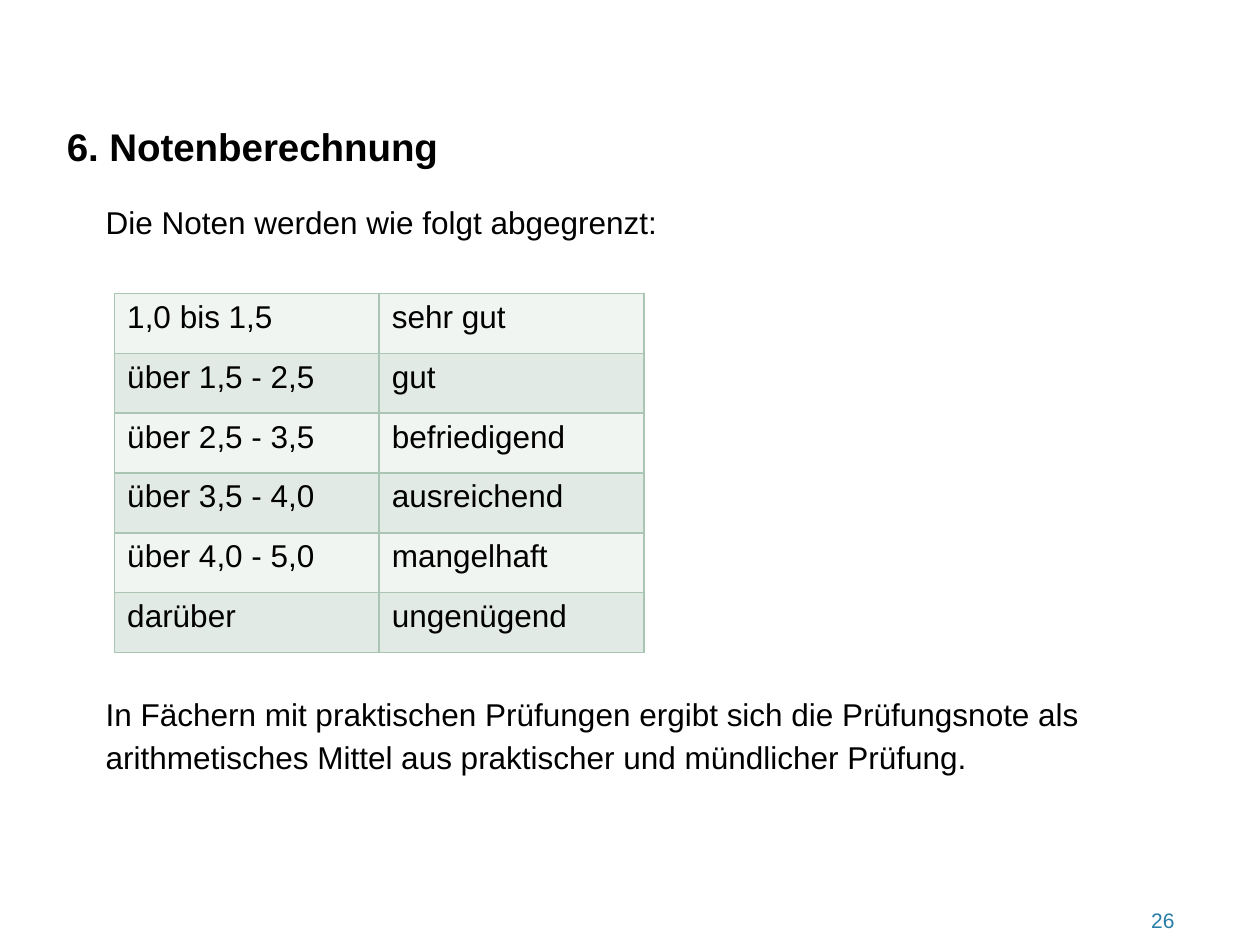
import pptx
import pptx.dml.color
import pptx.enum.text
import pptx.oxml
import pptx.oxml.ns
import pptx.util
from pptx.util import Inches

RGBColor = pptx.dml.color.RGBColor
PP_ALIGN = pptx.enum.text.PP_ALIGN
MSO_ANCHOR = pptx.enum.text.MSO_ANCHOR

BLACK = RGBColor(0x00, 0x00, 0x00)
BLUE = RGBColor(0x28, 0x7D, 0xA8)
BORDER = RGBColor(0xAA, 0xC5, 0xB4)
BANDS = (RGBColor(0xF1, 0xF5, 0xF2), RGBColor(0xE2, 0xEA, 0xE5))

GRADES = (
    ("1,0 bis 1,5", "sehr gut"),
    ("über 1,5 - 2,5", "gut"),
    ("über 2,5 - 3,5", "befriedigend"),
    ("über 3,5 - 4,0", "ausreichend"),
    ("über 4,0 - 5,0", "mangelhaft"),
    ("darüber", "ungenügend"),
)


def write(para, text, size, color=BLACK, bold=False, align=PP_ALIGN.LEFT):
    """Put formatted text into a paragraph."""
    para.text = text
    para.alignment = align
    for span in para.runs:
        span.font.name = "Arial"
        span.font.size = pptx.util.Pt(size)
        span.font.bold = bold
        span.font.color.rgb = color


def place_title(page, left, top, width, height):
    """Move and format the slide title."""
    title = page.shapes.title
    title.left, title.top, title.width, title.height = left, top, width, height
    frame = title.text_frame
    frame.auto_size = pptx.enum.text.MSO_AUTO_SIZE.NONE
    frame.vertical_anchor = MSO_ANCHOR.TOP
    write(frame.paragraphs[0], "6. Notenberechnung", 22, bold=True)
    frame.paragraphs[0].line_spacing = 1.1


def add_body(page, left, top, width, height):
    """Add the sentences above and below the grade table."""
    frame = page.shapes.add_textbox(left, top, width, height).text_frame
    frame.word_wrap = True
    intro, closing = frame.paragraphs[0], frame.add_paragraph()
    write(intro, "Die Noten werden wie folgt abgegrenzt:", 18)
    write(closing, "In Fächern mit praktischen Prüfungen ergibt sich die Prüfungsnote als "
          "arithmetisches Mittel aus praktischer und mündlicher Prüfung.", 18)
    closing.space_before = pptx.util.Pt(256)
    for para in (intro, closing):
        para.line_spacing = 1.15


def add_borders(cell):
    """Draw a thin line on each side of a table cell."""
    properties = cell._tc.get_or_add_tcPr()
    for position, side in enumerate(("lnL", "lnR", "lnT", "lnB")):
        line = pptx.oxml.parse_xml(
            f'<a:{side} {pptx.oxml.ns.nsdecls("a")} w="{pptx.util.Pt(1)}">'
            f'<a:solidFill><a:srgbClr val="{BORDER}"/></a:solidFill></a:{side}>')
        properties.insert(position, line)


def add_grade_table(page, left, top, width, height):
    """Add the banded table of grade ranges."""
    table = page.shapes.add_table(len(GRADES), 2, left, top, width, height).table
    table.first_row = False
    for row, grade in enumerate(GRADES):
        for column, text in enumerate(grade):
            cell = table.cell(row, column)
            cell.fill.solid()
            cell.fill.fore_color.rgb = BANDS[row % 2]
            write(cell.text_frame.paragraphs[0], text, 18)
            add_borders(cell)


def add_page_number(page, left, top, width, height):
    """Add the page number at the lower right."""
    frame = page.shapes.add_textbox(left, top, width, height).text_frame
    frame.word_wrap = True
    frame.margin_top, frame.margin_bottom = Inches(0.2), 0
    write(frame.paragraphs[0], "26", 12, BLUE, align=PP_ALIGN.RIGHT)


def main():
    """Build the slide and save the deck."""
    deck = pptx.Presentation()
    deck.slide_width, deck.slide_height = Inches(10), Inches(7.5)
    page = deck.slides.add_slide(deck.slide_layouts.get_by_name("Title Only"))
    place_title(page, Inches(0.43), Inches(0.89), Inches(4.96), Inches(0.63))
    add_page_number(page, Inches(8.49), Inches(7), Inches(0.93), Inches(0.4))
    add_body(page, Inches(0.74), Inches(1.52), Inches(8.34), Inches(5.04))
    add_grade_table(page, Inches(0.91), Inches(2.33), Inches(4.2), Inches(2.85))
    deck.save("out.pptx")


if __name__ == "__main__":
    main()
